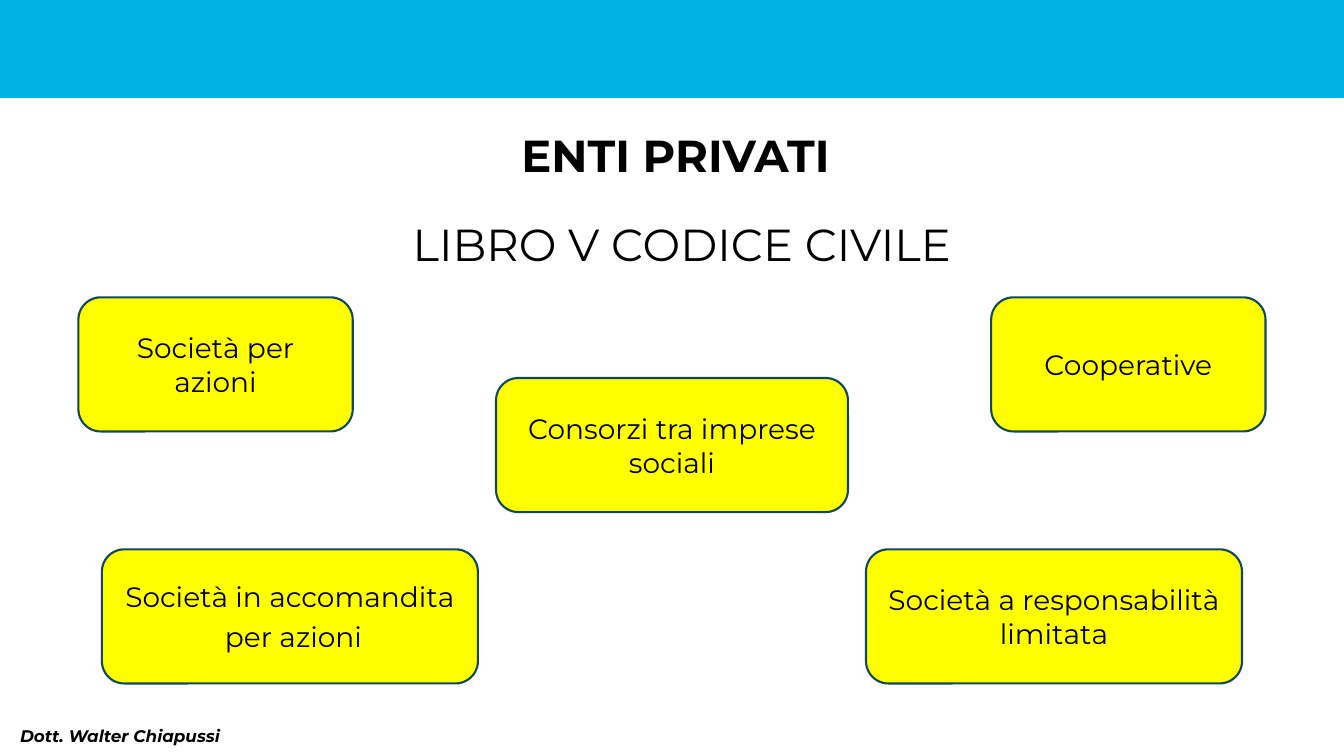
from pptx import Presentation
from pptx.dml.color import RGBColor
from pptx.enum.shapes import MSO_SHAPE
from pptx.enum.text import MSO_ANCHOR, MSO_AUTO_SIZE, PP_ALIGN
from pptx.util import Pt

BLACK = RGBColor(0x00, 0x00, 0x00)
CYAN = RGBColor(0x00, 0xB3, 0xE7)
YELLOW = RGBColor(0xFF, 0xFF, 0x00)
NAVY = RGBColor(0x10, 0x47, 0x60)
FONT = "Montserrat"
WIDE, HIGH = 960, 540

# Rows of boxes: top, width, left margin, texts (spread evenly to both margins)
ROWS = [
    (212.4, 196, 56, ["Società per azioni", "Cooperative"]),
    (270, 251.4, 354.3, ["Consorzi tra imprese sociali"]),
    (392.4, 268.6, 72.8, ["Società in accomandita\n per azioni",
                          "Società a responsabilità limitata"]),
]
BOX_HIGH = 95.8


def style(par, size, bold=False, italic=False):
    for run in par.runs:
        font = run.font
        font.name, font.size = FONT, Pt(size)
        font.bold, font.italic = bold, italic
        font.color.rgb = BLACK


def add_band(slide, left, top, width, height):
    band = slide.shapes.add_shape(
        MSO_SHAPE.RECTANGLE, Pt(left), Pt(top), Pt(width), Pt(height))
    band.shadow.inherit = False
    band.fill.solid()
    band.fill.fore_color.rgb = CYAN
    band.line.color.rgb = CYAN
    band.line.width = Pt(0.75)


def add_title(slide, left, top, width, height):
    title = slide.shapes.title
    title.left, title.top = Pt(left), Pt(top)
    title.width, title.height = Pt(width), Pt(height)
    frame = title.text_frame
    frame.text = "ENTI PRIVATI \nLIBRO V CODICE CIVILE"
    frame.word_wrap = True
    frame.auto_size = MSO_AUTO_SIZE.NONE
    frame.vertical_anchor = MSO_ANCHOR.TOP
    for par, bold in zip(frame.paragraphs, (True, False)):
        par.alignment = PP_ALIGN.CENTER
        par.line_spacing = 1.5
        par.space_after = Pt(6)
        style(par, 32, bold)


def add_box(slide, text, left, top, width, height):
    box = slide.shapes.add_shape(
        MSO_SHAPE.ROUNDED_RECTANGLE, Pt(left), Pt(top), Pt(width), Pt(height))
    box.shadow.inherit = False
    box.fill.solid()
    box.fill.fore_color.rgb = YELLOW
    box.line.color.rgb = NAVY
    box.line.width = Pt(1.5)
    frame = box.text_frame
    frame.text = text
    frame.word_wrap = True
    frame.vertical_anchor = MSO_ANCHOR.MIDDLE
    for par in frame.paragraphs:
        par.alignment = PP_ALIGN.CENTER
        par.space_after = Pt(4.5)
        style(par, 20)


def add_row(slide, texts, left, top, width, height, wide):
    step = (width - wide) / max(len(texts) - 1, 1)
    for num, text in enumerate(texts):
        add_box(slide, text, left + num * step, top, wide, height)


def add_credit(slide, left, top, width, height):
    box = slide.shapes.add_textbox(Pt(left), Pt(top), Pt(width), Pt(height))
    frame = box.text_frame
    frame.text = "Dott. Walter Chiapussi"
    frame.word_wrap = True
    frame.margin_left = frame.margin_right = Pt(5)
    frame.margin_top = frame.margin_bottom = Pt(2.9)
    style(frame.paragraphs[0], 12, bold=True, italic=True)


def main():
    deck = Presentation()
    deck.slide_width, deck.slide_height = Pt(WIDE), Pt(HIGH)
    slide = deck.slides.add_slide(deck.slide_layouts[5])

    # Header band, title and author
    add_band(slide, 0, 0, WIDE, 69.8)
    add_title(slide, 187.2, 68.4, 599.8, 123.8)
    add_credit(slide, 9.4, 515.5, 158.4, 20.2)

    # Kinds of company
    for top, wide, margin, texts in ROWS:
        add_row(slide, texts, margin, top, WIDE - 2 * margin, BOX_HIGH, wide)

    deck.save("out.pptx")


if __name__ == "__main__":
    main()
